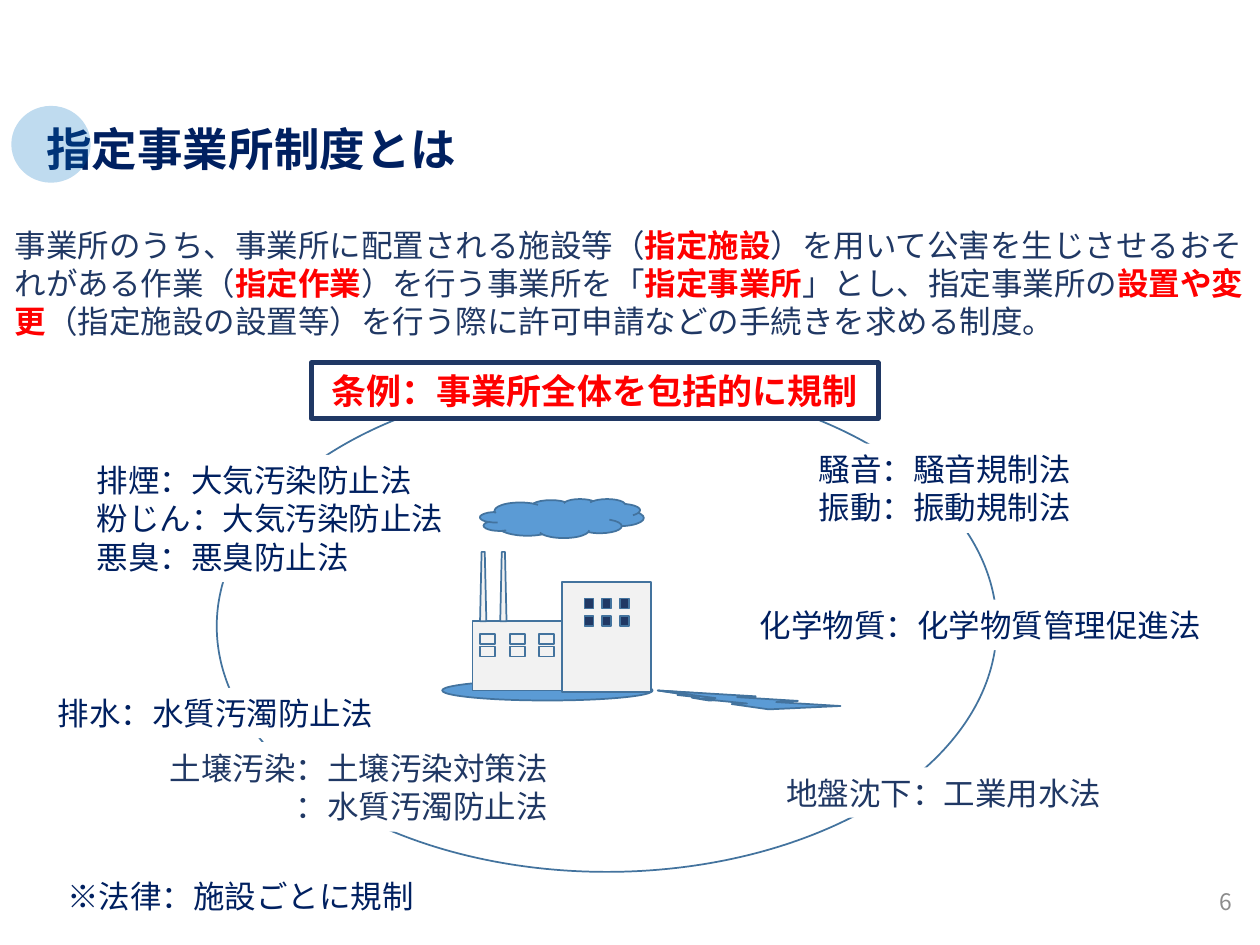
from dataclasses import dataclass
from itertools import product
from typing import Any

from lxml import etree
from pptx import Presentation
from pptx.dml.color import RGBColor
from pptx.enum.shapes import MSO_SHAPE
from pptx.enum.text import MSO_ANCHOR, PP_ALIGN
from pptx.oxml.ns import qn
from pptx.util import Inches, Pt

RECT, OVAL, CLOUD = MSO_SHAPE.RECTANGLE, MSO_SHAPE.OVAL, MSO_SHAPE.CLOUD
CHIMNEY, STREAM = MSO_SHAPE.TRAPEZOID, MSO_SHAPE.LIGHTNING_BOLT
LEFT, CENTER, RIGHT = PP_ALIGN.LEFT, PP_ALIGN.CENTER, PP_ALIGN.RIGHT
TOP, MIDDLE = MSO_ANCHOR.TOP, MSO_ANCHOR.MIDDLE
COLUMNS, ROWS = 100, 75


@dataclass(frozen=True)
class Theme:
    font: str = "Noto Sans CJK JP"
    title_size: int = 26
    banner_size: int = 20
    body_size: int = 18
    number_size: int = 13
    line_pitch: float = 1.21
    navy: str = "002060"
    slate: str = "203864"
    red: str = "FF0000"
    gray: str = "8C8C8C"
    white: str = "FFFFFF"
    wall: str = "F2F2F2"
    water: str = "5B9BD5"
    outline: str = "43739E"
    accent: str = "0070C0"


THEME = Theme()


@dataclass(frozen=True)
class Area:
    column: float
    row: float
    columns: float
    rows: float


@dataclass(frozen=True)
class Label:
    area: Area
    lines: tuple[str, ...]
    color: str = THEME.navy
    align: Any = LEFT
    hanging_characters: int = 0


@dataclass(frozen=True)
class Part:
    kind: Any
    area: Area
    fill: str | None
    rotation: int = 0


@dataclass(frozen=True)
class Windows:
    columns: tuple[float, ...]
    rows: tuple[float, ...]
    width: float
    height: float
    fill: str


BUILDING = (
    Part(OVAL, Area(17.2, 30.2, 61.9, 39), None),
    Part(OVAL, Area(35.1, 54, 16.7, 1.6), THEME.water),
    Part(RECT, Area(37.5, 49.3, 7.1, 5.5), THEME.wall),
    Part(RECT, Area(44.6, 46.2, 7.1, 8.7), THEME.wall),
    Part(CHIMNEY, Area(39.7, 43.8, 0.5, 5.5), THEME.wall),
    Part(CHIMNEY, Area(38.1, 43.8, 0.5, 5.5), THEME.wall),
    Part(STREAM, Area(52.2, 54.8, 6.7, 0.8), THEME.water, 180),
    Part(STREAM, Area(52.2, 54.8, 14.5, 1.5), THEME.water, 180),
    Part(CLOUD, Area(38.1, 39.6, 13, 3.1), THEME.water),
)
WINDOWS = (
    Windows((38.1, 40.45, 42.8), (50.3, 51.3), 1.2, 0.8, THEME.wall),
    Windows((46.4, 47.8, 49.2), (47.5, 48.9), 0.7, 0.8, THEME.slate),
)
LAWS = (
    Label(Area(6.7, 36.1, 31.1, 10.1),
          ("排煙：大気汚染防止法", "粉じん：大気汚染防止法", "悪臭：悪臭防止法")),
    Label(Area(12.5, 58.9, 33.9, 7.1),
          ("土壌汚染：土壌汚染対策法", "：水質汚濁防止法"),
          THEME.slate, hanging_characters=4),
    Label(Area(64, 35.2, 25.2, 7.1), ("騒音：騒音規制法", "振動：振動規制法")),
    Label(Area(3.6, 54.6, 27.6, 4), ("排水：水質汚濁防止法",)),
    Label(Area(59.3, 47.6, 37.2, 4), ("化学物質：化学物質管理促進法",)),
    Label(Area(61.4, 60.9, 33.2, 4), ("地盤沈下：工業用水法",), THEME.slate),
)
NOTE = Label(Area(2.7, 69.1, 32.8, 4), ("※法律：施設ごとに規制",), align=CENTER)
SUMMARY = (
    "事業所のうち、事業所に配置される施設等（*指定施設*）を用いて公害を生じさせるおそれがある作業（"
    "*指定作業*）を行う事業所を「*指定事業所*」とし、指定事業所の*設置や変更*"
    "（指定施設の設置等）を行う際に許可申請などの手続きを求める制度。"
)


def place(area: Area) -> tuple[int, int, int, int]:
    across, down = Inches(10) / COLUMNS, Inches(7.5) / ROWS
    return (round(area.column * across), round(area.row * down),
            round(area.columns * across), round(area.rows * down))


def draw_shape(shapes: Any, kind: Any, area: Area, fill: str | None,
               line: str | None = THEME.outline, line_width: float = 1) -> Any:
    shape = shapes.add_shape(kind, *place(area))
    shape.shadow.inherit = False
    if fill:
        shape.fill.solid()
        shape.fill.fore_color.rgb = RGBColor.from_string(fill)
    else:
        shape.fill.background()
    if line:
        shape.line.color.rgb = RGBColor.from_string(line)
        shape.line.width = Pt(line_width)
    else:
        shape.line.fill.background()
    return shape


def write(box: Any, *lines: str, size: int = THEME.body_size, color: str = THEME.navy,
          bold: bool = False, align: Any = LEFT, anchor: Any = TOP,
          hanging_characters: int = 0) -> None:
    frame = box.text_frame
    frame.word_wrap = True
    frame.vertical_anchor = anchor
    for index, line in enumerate(lines):
        para = frame.add_paragraph() if index else frame.paragraphs[0]
        para.alignment = align
        para.line_spacing = Pt(size * THEME.line_pitch)
        if index and hanging_characters:
            para._p.get_or_add_pPr().set("marL", str(Pt(size * hanging_characters)))
        for position, words in enumerate(line.split("*")):
            emphasized = position % 2 == 1
            span = para.add_run()
            span.text = words
            span.font.name = THEME.font
            span.font.size = Pt(size)
            span.font.bold = bold or emphasized
            span.font.color.rgb = RGBColor.from_string(THEME.red if emphasized else color)
            etree.SubElement(span.font._element, qn("a:ea")).set("typeface", THEME.font)


def draw_label(shapes: Any, label: Label) -> None:
    box = draw_shape(shapes, RECT, label.area, THEME.white, None)
    write(box, *label.lines, color=label.color, align=label.align,
          hanging_characters=label.hanging_characters)


def draw_windows(shapes: Any, windows: Windows) -> None:
    for row, column in product(windows.rows, windows.columns):
        draw_shape(shapes, RECT, Area(column, row, windows.width, windows.height), windows.fill)


def draw_diagram(shapes: Any) -> None:
    for part in BUILDING:
        draw_shape(shapes, part.kind, part.area, part.fill).rotation = part.rotation
    for windows in WINDOWS:
        draw_windows(shapes, windows)
    for label in LAWS:
        draw_label(shapes, label)


def draw_title(shapes: Any) -> None:
    title = shapes.add_textbox(*place(Area(2.7, 9.1, 79.2, 5.4)))
    write(title, "指定事業所制度とは", size=THEME.title_size, bold=True)
    circle = draw_shape(shapes, OVAL, Area(0.9, 8.4, 6.3, 6.1), THEME.accent, None)
    tint = circle._element.spPr.find(qn("a:solidFill"))[0]
    etree.SubElement(tint, qn("a:alpha")).set("val", "25000")


def main() -> None:
    deck = Presentation()
    deck.slide_width, deck.slide_height = Inches(10), Inches(7.5)
    page = deck.slides.add_slide(deck.slide_layouts[6])
    shapes = page.shapes
    draw_title(shapes)
    number = shapes.add_textbox(*place(Area(76.3, 69.5, 22.5, 4)))
    write(number, "6", size=THEME.number_size, color=THEME.gray, align=RIGHT, anchor=MIDDLE)
    draw_label(shapes, NOTE)
    draw_diagram(shapes.add_group_shape().shapes)
    banner = draw_shape(shapes, RECT, Area(24.7, 28.8, 45, 4.4), THEME.white, THEME.slate, 3)
    write(banner, "条例：事業所全体を包括的に規制", size=THEME.banner_size,
          color=THEME.red, bold=True, align=CENTER)
    summary = shapes.add_textbox(*place(Area(0.2, 17.4, 99.7, 10.1)))
    write(summary, SUMMARY, color=THEME.slate)
    deck.save("out.pptx")


if __name__ == "__main__":
    main()
